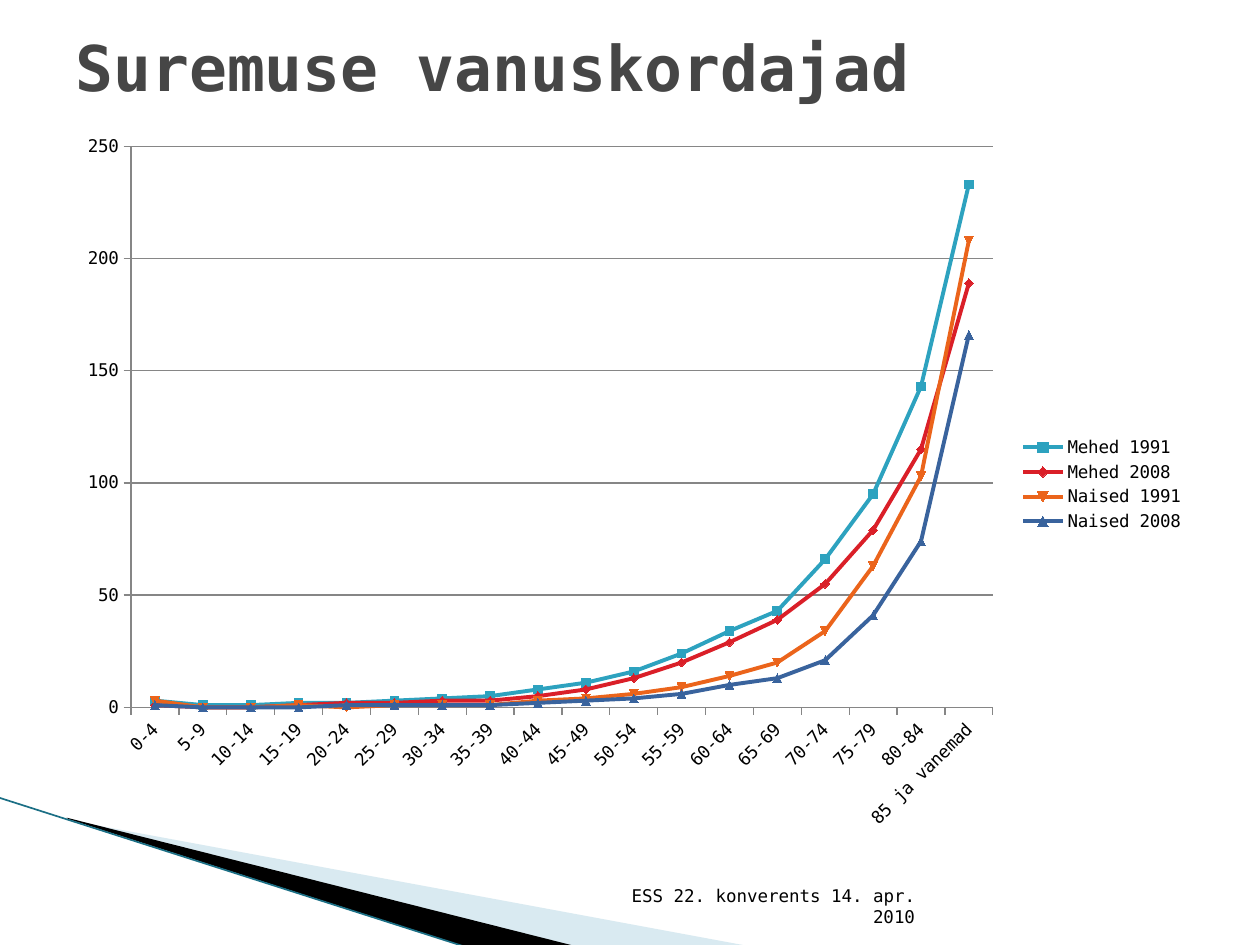
from lxml import etree
from pptx import Presentation
from pptx.chart.data import CategoryChartData
from pptx.dml.color import RGBColor
from pptx.enum.chart import XL_CHART_TYPE, XL_LEGEND_POSITION, XL_TICK_MARK
from pptx.enum.shapes import MSO_CONNECTOR
from pptx.enum.text import MSO_ANCHOR, PP_ALIGN
from pptx.oxml import parse_xml
from pptx.oxml.ns import nsdecls, qn
from pptx.util import Inches, Pt

GROUPS = [f"{a}-{a + 4}" for a in range(0, 85, 5)] + ["85 ja vanemad"]
RATES = [
    ("Mehed 1991", "2DA2BF",
     [3, 1, 1, 2, 2, 3, 4, 5, 8, 11, 16, 24, 34, 43, 66, 95, 143, 233]),
    ("Mehed 2008", "DA1F28",
     [1, 0, 0, 1, 2, 2, 3, 3, 5, 8, 13, 20, 29, 39, 55, 79, 115, 189]),
    ("Naised 1991", "EB641B",
     [3, 0, 0, 1, 0, 1, 1, 1, 3, 4, 6, 9, 14, 20, 34, 63, 103, 208]),
    ("Naised 2008", "39639D",
     [1, 0, 0, 0, 1, 1, 1, 1, 2, 3, 4, 6, 10, 13, 21, 41, 74, 166]),
]


def tint(hue):
    return RGBColor.from_string(hue)


class Deck:
    """Style and current slide; lengths are columns and rows of one inch."""
    font = "DejaVu Sans Mono"
    ink = "000000"
    axis = "868686"

    def __init__(self, cols, rows):
        self.prs = Presentation()
        self.prs.slide_width = Inches(cols)
        self.prs.slide_height = Inches(rows)
        self.slide = self.prs.slides.add_slide(self.prs.slide_layouts[6])
        self.shapes = self.slide.shapes

    def wedge(self, points, hue, alpha=None):
        pts = [(Inches(x), Inches(y)) for x, y in points]
        build = self.shapes.build_freeform(*pts[0])
        build.add_line_segments(pts[1:], close=True)
        shape = build.convert_to_shape()
        shape.shadow.inherit = False
        shape.fill.solid()
        shape.fill.fore_color.rgb = tint(hue)
        shape.line.fill.background()
        if alpha:
            color = shape.fill._xPr.find(".//" + qn("a:srgbClr"))
            etree.SubElement(color, qn("a:alpha")).set("val", str(alpha * 1000))

    def line(self, start, end, hue, width):
        ends = [Inches(v) for v in start + end]
        line = self.shapes.add_connector(MSO_CONNECTOR.STRAIGHT, *ends)
        line.line.color.rgb = tint(hue)
        line.line.width = Pt(width)
        etree.SubElement(line._element.spPr, qn("a:effectLst"))

    def text(self, box, words, size, hue, anchor, align=PP_ALIGN.LEFT, bold=False):
        frame = self.shapes.add_textbox(*map(Inches, box)).text_frame
        frame.word_wrap = True
        frame.vertical_anchor = anchor
        par = frame.paragraphs[0]
        par.text = words
        par.alignment = align
        self.style(par.font, size, hue, bold)

    def style(self, font, size, hue, bold=False):
        font.name, font.size, font.bold = self.font, Pt(size), bold
        font.color.rgb = tint(hue)

    def chart(self, box, groups, rates, plot):
        data = CategoryChartData()
        data.categories = groups
        for name, _, vals in rates:
            data.add_series(name, vals)
        chart = self.shapes.add_chart(
            XL_CHART_TYPE.LINE_MARKERS, *map(Inches, box), data).chart
        self.style(chart.font, 10, self.ink)
        chart.has_title = False
        chart.has_legend = True
        chart.legend.position = XL_LEGEND_POSITION.RIGHT
        chart.legend.include_in_layout = False
        chart.plots[0].vary_by_categories = False

        # Series keep the automatic marker symbols
        for series, (_, hue, _) in zip(chart.plots[0].series, rates):
            series.smooth = False
            series.format.line.color.rgb = tint(hue)
            series.format.line.width = Pt(2.25)
            series.marker.size = 5
            series.marker.format.fill.solid()
            series.marker.format.fill.fore_color.rgb = tint(hue)
            series.marker.format.line.color.rgb = tint(hue)

        # Axes and grid
        value, group = chart.value_axis, chart.category_axis
        value.minimum_scale, value.maximum_scale = 0, 250
        value.major_unit = 50
        value.has_major_gridlines = True
        for part in (value, group, value.major_gridlines):
            part.format.line.color.rgb = tint(self.axis)
            part.format.line.width = Pt(0.75)
        for part in (value, group):
            part.major_tick_mark = XL_TICK_MARK.OUTSIDE
            self.style(part.tick_labels.font, 10, self.ink)
        turn = group._element.find(qn("c:txPr")).find(qn("a:bodyPr"))
        turn.set("rot", "-2700000")
        turn.set("vert", "horz")

        # Plot area as shares of the chart
        area = chart._chartSpace.chart.plotArea
        old = area.find(qn("c:layout"))
        if old is not None:
            area.remove(old)
        sizes = "".join(f'<c:{k} val="{v}"/>' for k, v in zip("xywh", plot))
        area.insert(0, parse_xml(
            f'<c:layout {nsdecls("c")}><c:manualLayout>'
            '<c:layoutTarget val="inner"/><c:xMode val="edge"/>'
            f'<c:yMode val="edge"/>{sizes}</c:manualLayout></c:layout>'))

    def save(self):
        self.prs.save("out.pptx")


def main():
    deck = Deck(10, 7.5)
    # Corner wedges
    deck.wedge([(0.55, 6.51), (5.95, 7.51), (4.56, 7.51), (0.55, 6.5)],
               "A0CBDC", 40)
    deck.wedge([(0.53, 6.49), (4.57, 7.51), (3.72, 7.52), (0.54, 6.5)], "000000")
    deck.line((-0.01, 6.33), (3.71, 7.52), "1B6F85", 0.95)
    # Footer and title
    deck.text((4.79, 7.01, 2.57, 0.4), "ESS 22. konverents 14. apr. 2010",
              10, deck.ink, MSO_ANCHOR.BOTTOM, PP_ALIGN.RIGHT)
    deck.text((0.5, 0.3, 9, 0.46), "Suremuse vanuskordajad",
              36, "464646", MSO_ANCHOR.MIDDLE, bold=True)
    # Death rates by age
    deck.chart((0.5, 0.99, 9, 5.71), GROUPS, RATES, (0.06, 0.03, 0.76, 0.78))
    deck.save()


if __name__ == "__main__":
    main()
